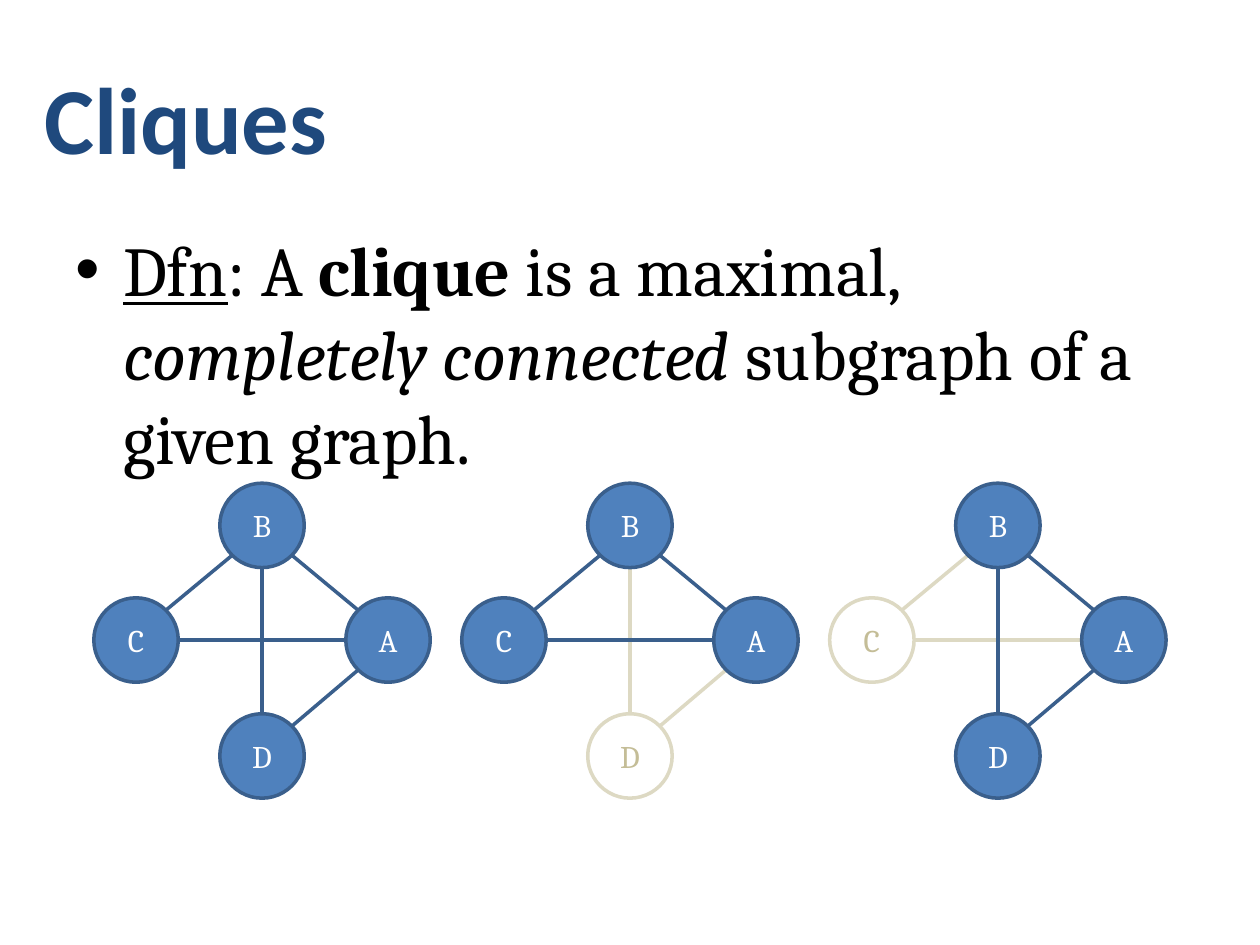
from math import sqrt

from pptx import Presentation
from pptx.dml.color import RGBColor
from pptx.enum.shapes import MSO_CONNECTOR as Link, MSO_SHAPE as Shape
from pptx.enum.text import MSO_ANCHOR as Anchor, PP_ALIGN as Align
from pptx.oxml.ns import qn
from pptx.util import Inches, Pt
from lxml.etree import SubElement

NAVY = RGBColor(0x1F, 0x49, 0x7D)
BLUE = RGBColor(0x4F, 0x81, 0xBD)
EDGE = RGBColor(0x3A, 0x5F, 0x8C)
PALE = RGBColor(0xDD, 0xD9, 0xC3)
TAN = RGBColor(0xC4, 0xBD, 0x97)
WHITE = RGBColor(0xFF, 0xFF, 0xFF)
BLACK = RGBColor(0x00, 0x00, 0x00)

SIZE = 0.67
STEP = 2.92
NODES = {"A": (3.08, 5.08), "B": (2.08, 4.17), "C": (1.08, 5.08), "D": (2.08, 6)}
EDGES = ["CB", "AB", "AD", "BD", "CA"]
FADED = ["", "D", "C"]


def style(font, name, size, color, bold=None):
    """Set the face, size, colour and weight of a font."""
    font.name, font.size, font.bold = name, Pt(size), bold
    font.color.rgb = color


def add_title(slide, text):
    """Place and format the title placeholder."""
    title = slide.shapes.title
    title.left, title.top = Inches(0.25), Inches(0.3)
    title.width, title.height = Inches(9.5), Inches(1.25)
    frame = title.text_frame
    frame.text = text
    frame.vertical_anchor = Anchor.MIDDLE
    para = frame.paragraphs[0]
    para.alignment = Align.LEFT
    style(para.font, "Calibri", 54, NAVY, True)


def add_bullet(slide, parts):
    """Add a bulleted paragraph from (text, font attribute) pairs."""
    box = slide.shapes.add_textbox(Inches(0.5), Inches(1.75), Inches(9), Inches(5.75))
    box.text_frame.word_wrap = True
    para = box.text_frame.paragraphs[0]
    para.space_before = Pt(8)
    style(para.font, "Cambria", 40, BLACK)
    props = para._p.get_or_add_pPr()
    props.set("marL", str(Inches(0.38)))
    props.set("indent", str(Inches(-0.38)))
    bullet = props.makeelement(qn("a:buFont"), {"typeface": "Arial"})
    mark = props.makeelement(qn("a:buChar"), {"char": "•"})
    spot = props.index(props.find(qn("a:defRPr")))
    props[spot:spot] = [bullet, mark]
    for text, trait in parts:
        run = para.add_run()
        run.text = text
        style(run.font, "Cambria", 40, BLACK)
        if trait:
            setattr(run.font, trait, True)


def add_edge(slide, start, end, color):
    """Join the rims of two nodes given by their centres."""
    (x1, y1), (x2, y2) = start, end
    dx = (x2 > x1) - (x2 < x1)
    dy = (y2 > y1) - (y2 < y1)
    reach = SIZE / 2 / sqrt(dx * dx + dy * dy)
    ends = (x1 + dx * reach, y1 + dy * reach, x2 - dx * reach, y2 - dy * reach)
    line = slide.shapes.add_connector(Link.STRAIGHT, *map(Inches, ends))
    line.line.color.rgb, line.line.width = color, Pt(2)
    SubElement(line._element.spPr, qn("a:effectLst"))


def add_node(slide, name, spot, faded):
    """Add a labelled circle round a centre."""
    x, y = (Inches(v - SIZE / 2) for v in spot)
    node = slide.shapes.add_shape(Shape.OVAL, x, y, Inches(SIZE), Inches(SIZE))
    node.shadow.inherit = False
    node.fill.solid()
    node.fill.fore_color.rgb = WHITE if faded else BLUE
    node.line.color.rgb, node.line.width = PALE if faded else EDGE, Pt(2)
    frame = node.text_frame
    frame.text = name
    frame.vertical_anchor = Anchor.MIDDLE
    para = frame.paragraphs[0]
    para.alignment = Align.CENTER
    style(para.font, "Cambria", 18, TAN if faded else WHITE)


def add_graph(slide, shift, faded):
    """Draw the graph with one node, if any, faded behind the rest."""
    spots = {name: (x + shift, y) for name, (x, y) in NODES.items()}
    lit = lambda pair: faded == "" or faded not in pair
    for pair in sorted(EDGES, key=lit):
        add_edge(slide, spots[pair[0]], spots[pair[1]], EDGE if lit(pair) else PALE)
    for name, spot in spots.items():
        add_node(slide, name, spot, name == faded)


def main():
    """Build and save the slide."""
    deck = Presentation()
    deck.slide_width, deck.slide_height = Inches(10), Inches(7.5)
    slide = deck.slides.add_slide(deck.slide_layouts[5])
    add_title(slide, "Cliques")
    add_bullet(slide, [
        ("Dfn", "underline"),
        (": A ", None),
        ("clique ", "bold"),
        ("is a maximal, ", None),
        ("completely connected ", "italic"),
        ("subgraph of a given graph.", None),
    ])
    for i, faded in enumerate(FADED):
        add_graph(slide, i * STEP, faded)
    deck.save("out.pptx")


if __name__ == "__main__":
    main()
